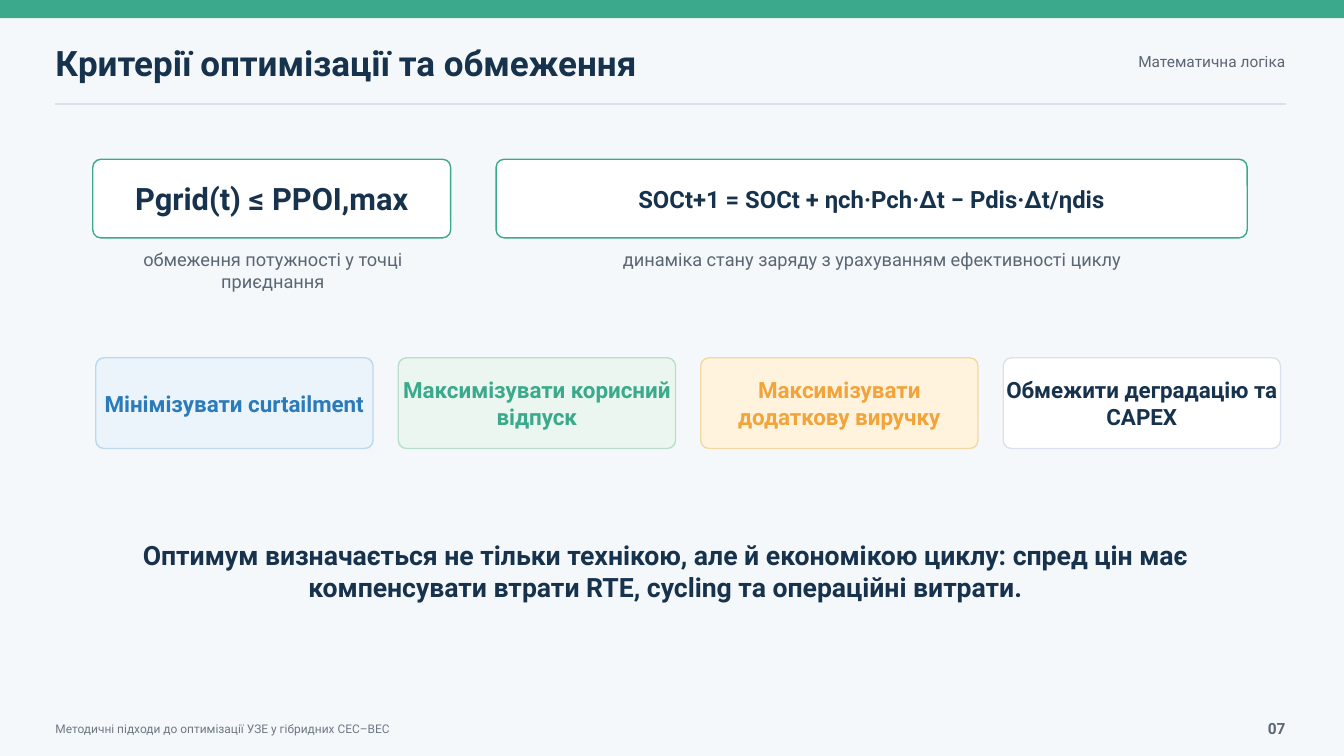
from dataclasses import dataclass

from lxml.etree import SubElement
from pptx import Presentation
from pptx.dml.color import RGBColor
from pptx.enum.shapes import MSO_CONNECTOR, MSO_SHAPE
from pptx.enum.text import MSO_ANCHOR as Anchor
from pptx.enum.text import MSO_AUTO_SIZE as AutoSize
from pptx.enum.text import PP_ALIGN as Align
from pptx.oxml.ns import qn
from pptx.util import Inches, Pt


@dataclass(frozen=True)
class Theme:
    font: str = "Roboto"
    background: str = "F5F8FB"
    navy: str = "17324D"
    green: str = "3BAA8C"
    blue: str = "2B7BBB"
    orange: str = "F2A33A"
    gray: str = "5B6673"
    footer_gray: str = "6D7783"
    rule: str = "D9E2EC"
    white: str = "FFFFFF"
    blue_fill: str = "EAF4FA"
    blue_line: str = "BBD8EE"
    green_fill: str = "EAF6EF"
    green_line: str = "B7DFC9"
    orange_fill: str = "FFF3DE"
    orange_line: str = "F3D8A3"
    title_size: float = 25
    formula_size: float = 22
    long_formula_size: float = 17
    message_size: float = 19
    goal_size: float = 16
    caption_size: float = 13
    label_size: float = 11
    footer_size: float = 8.5


THEME = Theme()
CORNER_RADIUS = 0.08


def color(value):
    return RGBColor.from_string(value)


def write(shape, text, size, ink, bold=False, align=Align.LEFT, anchor=Anchor.MIDDLE):
    frame = shape.text_frame
    layout = {
        "word_wrap": True,
        "auto_size": AutoSize.NONE,
        "vertical_anchor": anchor,
        "margin_left": 0,
        "margin_top": 0,
        "margin_right": 0,
        "margin_bottom": 0,
    }
    for name, value in layout.items():
        setattr(frame, name, value)
    frame.text = text
    para = frame.paragraphs[0]
    para.alignment = align
    font = para.runs[0].font
    for name, value in {"name": THEME.font, "size": Pt(size), "bold": bold}.items():
        setattr(font, name, value)
    font.color.rgb = color(ink)


def add_title(page, text, left, top, width, height):
    title = page.shapes.title
    place = {"left": left, "top": top, "width": width, "height": height}
    for name, value in place.items():
        setattr(title, name, Inches(value))
    write(title, text, THEME.title_size, THEME.navy, bold=True)


def add_text(page, place, text, size, ink, **style):
    box = page.shapes.add_textbox(*map(Inches, place))
    write(box, text, size, ink, **style)


def add_top_band(page, width, height):
    band = page.shapes.add_shape(MSO_SHAPE.RECTANGLE, 0, 0, width, Inches(height))
    band.shadow.inherit = False
    band.fill.solid()
    band.fill.fore_color.rgb = color(THEME.green)
    band.line.fill.background()


def add_rule(page, left, right, top):
    ends = map(Inches, (left, top, right, top))
    rule = page.shapes.add_connector(MSO_CONNECTOR.STRAIGHT, *ends)
    rule.line.color.rgb = color(THEME.rule)
    rule.line.width = Pt(1)
    SubElement(rule._element.spPr, qn("a:effectLst"))


def add_card(page, place, text, size, ink, fill, outline):
    card = page.shapes.add_shape(MSO_SHAPE.ROUNDED_RECTANGLE, *map(Inches, place))
    card.adjustments[0] = CORNER_RADIUS / place[3]
    card.shadow.inherit = False
    card.fill.solid()
    card.fill.fore_color.rgb = color(fill)
    card.line.color.rgb = color(outline)
    card.line.width = Pt(1)
    write(card, text, size, ink, bold=True, align=Align.CENTER)


def add_formula(page, left, width, formula, size, caption_left, caption_width, caption):
    """Add a formula card with its explanation underneath."""
    add_card(page, (left, 1.58, width, 0.78), formula, size,
             THEME.navy, THEME.white, THEME.green)
    add_text(page, (caption_left, 2.46, caption_width, 0.35), caption,
             THEME.caption_size, THEME.gray, align=Align.CENTER, anchor=Anchor.TOP)


def add_goals(page, goals):
    """Add the optimization goals as an evenly spaced row of cards."""
    left, step = 0.95, 3
    for index, (text, ink, fill, outline) in enumerate(goals):
        add_card(page, (left + index * step, 3.55, 2.75, 0.9), text,
                 THEME.goal_size, ink, fill, outline)


def main():
    deck = Presentation()
    deck.slide_width, deck.slide_height = Inches(13.33), Inches(7.5)
    page = deck.slides.add_slide(deck.slide_layouts[5])
    page.background.fill.solid()
    page.background.fill.fore_color.rgb = color(THEME.background)

    add_top_band(page, deck.slide_width, 0.18)
    add_title(page, "Критерії оптимізації та обмеження", 0.55, 0.35, 9.4, 0.54)
    add_text(page, (10.3, 0.43, 2.45, 0.35), "Математична логіка",
             THEME.label_size, THEME.gray, align=Align.RIGHT)
    add_rule(page, 0.55, 12.75, 1.03)
    add_text(page, (0.55, 7.12, 8.5, 0.22),
             "Методичні підходи до оптимізації УЗЕ у гібридних СЕС–ВЕС",
             THEME.footer_size, THEME.footer_gray)
    add_text(page, (12.2, 7.05, 0.55, 0.35), "07",
             THEME.label_size, THEME.gray, bold=True, align=Align.RIGHT)

    add_formula(page, 0.92, 3.55, "Pgrid(t) ≤ PPOI,max", THEME.formula_size,
                1.03, 3.35, "обмеження потужності у точці приєднання")
    add_formula(page, 4.92, 7.45, "SOCt+1 = SOCt + ηch·Pch·Δt − Pdis·Δt/ηdis",
                THEME.long_formula_size, 5.12, 7.05,
                "динаміка стану заряду з урахуванням ефективності циклу")

    add_goals(page, [
        ("Мінімізувати curtailment", THEME.blue, THEME.blue_fill, THEME.blue_line),
        ("Максимізувати корисний відпуск", THEME.green, THEME.green_fill, THEME.green_line),
        ("Максимізувати додаткову виручку", THEME.orange, THEME.orange_fill,
         THEME.orange_line),
        ("Обмежити деградацію та CAPEX", THEME.navy, THEME.white, THEME.rule),
    ])
    add_text(page, (1.1, 5.35, 11, 0.6),
             "Оптимум визначається не тільки технікою, але й економікою циклу: "
             "спред цін має компенсувати втрати RTE, cycling та операційні витрати.",
             THEME.message_size, THEME.navy, bold=True,
             align=Align.CENTER, anchor=Anchor.TOP)
    deck.save("out.pptx")


if __name__ == "__main__":
    main()
